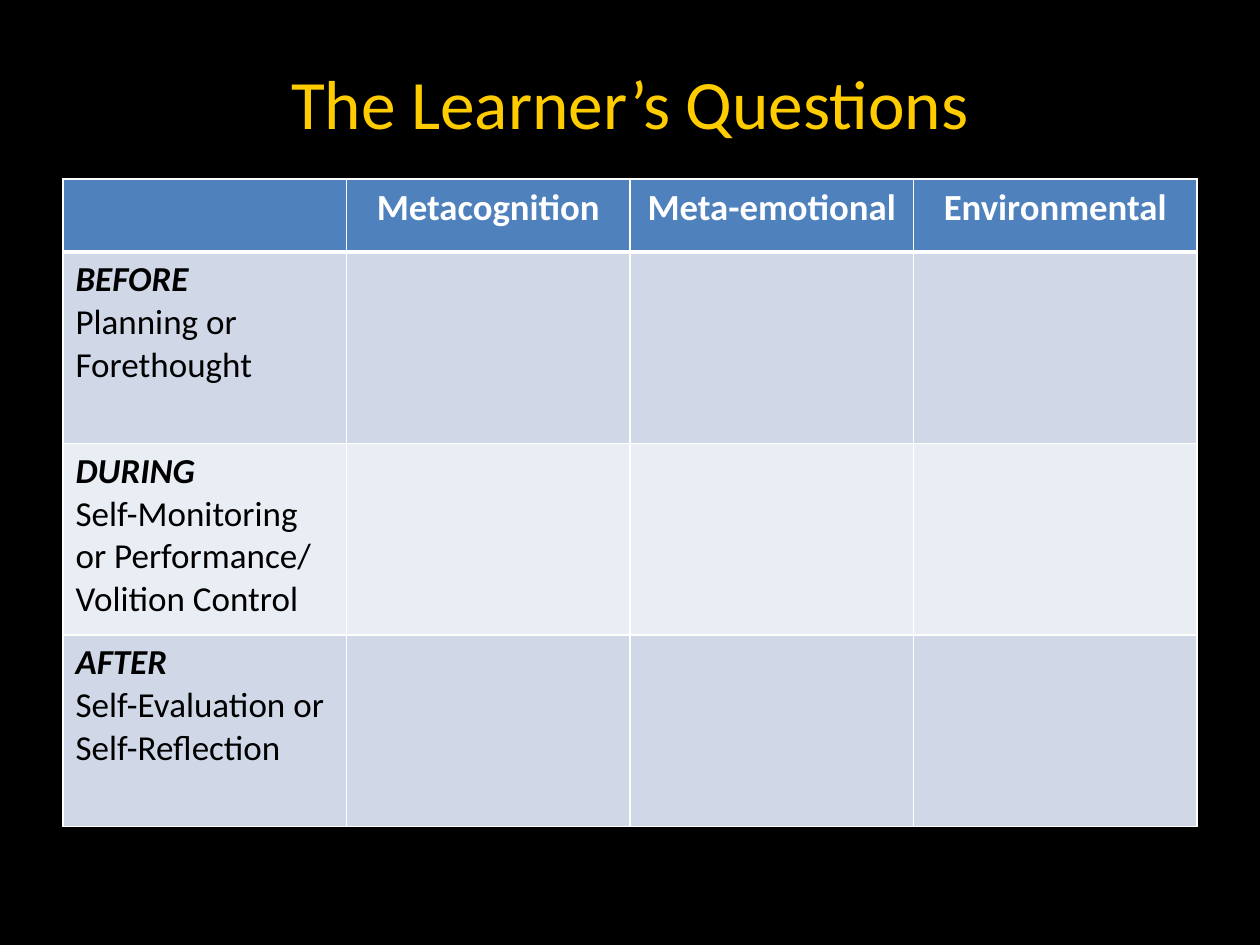
from lxml import etree
from pptx import Presentation
from pptx.dml.color import RGBColor
from pptx.enum import text
from pptx.oxml import ns
from pptx.util import Inches, Pt

COLORS = {
    "background": "000000",
    "title": "FFCC00",
    "header": "4F81BD",
    "odd_row": "D0D8E8",
    "even_row": "E9EDF4",
    "white": "FFFFFF",
    "black": "000000",
}

TITLE = {"size": Pt(39.6), "color": "title"}
HEADING = {"size": Pt(21), "bold": True, "color": "white"}
PHASE = {"size": Pt(20), "bold": True, "italic": True, "color": "black"}
DETAIL = {"size": Pt(20), "bold": False, "italic": False, "color": "black"}

HEADINGS = ["Metacognition", "Meta-emotional", "Environmental"]
PHASES = [
    ["BEFORE", "Planning or Forethought"],
    ["DURING", "Self-Monitoring or Performance/", "Volition Control"],
    ["AFTER", "Self-Evaluation or", "Self-Reflection"],
]
COLUMN_WIDTH = 2.25
HEADER_HEIGHT = 0.58
PHASE_HEIGHT = 1.52


def rgb(name):
    return RGBColor.from_string(COLORS[name])


def write_line(para, line, style):
    span = para.add_run()
    span.text = line
    span.font.name = "Calibri"
    for key, value in style.items():
        if key == "color":
            span.font.color.rgb = rgb(value)
        else:
            setattr(span.font, key, value)


def add_title(page, line):
    box = page.shapes.add_textbox(Inches(0.5), Inches(0.5), Inches(9), Inches(0.62))
    frame = box.text_frame
    frame.word_wrap = True
    frame.vertical_anchor = text.MSO_ANCHOR.MIDDLE
    para = frame.paragraphs[0]
    para.alignment = text.PP_ALIGN.CENTER
    write_line(para, line, TITLE)


def set_borders(cell, widths):
    """Draw white borders; widths maps each side (L, R, T, B) to points."""
    properties = cell._tc.get_or_add_tcPr()
    for index, (side, width) in enumerate(widths.items()):
        border = etree.Element(ns.qn(f"a:ln{side}"), w=str(Pt(width)))
        fill = etree.SubElement(border, ns.qn("a:solidFill"))
        etree.SubElement(fill, ns.qn("a:srgbClr"), val=COLORS["white"])
        properties.insert(index, border)


def format_cell(cell, row):
    fill_name = "header" if row == 0 else "odd_row" if row % 2 else "even_row"
    cell.fill.solid()
    cell.fill.fore_color.rgb = rgb(fill_name)
    # A thick rule separates the header from the phases
    top = 3 if row == 1 else 1
    bottom = 3 if row == 0 else 1
    set_borders(cell, {"L": 1, "R": 1, "T": top, "B": bottom})


def add_question_table(page):
    rows, columns = len(PHASES) + 1, len(HEADINGS) + 1
    height = HEADER_HEIGHT + PHASE_HEIGHT * len(PHASES)
    table = page.shapes.add_table(
        rows, columns, Inches(0.5), Inches(1.42),
        Inches(COLUMN_WIDTH * columns), Inches(height)).table

    # Grid
    for column in table.columns:
        column.width = Inches(COLUMN_WIDTH)
    for row, line in enumerate(table.rows):
        line.height = Inches(PHASE_HEIGHT if row else HEADER_HEIGHT)
        for cell in line.cells:
            format_cell(cell, row)

    # Header row
    for column, heading in enumerate(HEADINGS, 1):
        para = table.cell(0, column).text_frame.paragraphs[0]
        para.alignment = text.PP_ALIGN.CENTER
        write_line(para, heading, HEADING)

    # Phase column
    for row, (phase, *details) in enumerate(PHASES, 1):
        frame = table.cell(row, 0).text_frame
        write_line(frame.paragraphs[0], phase, PHASE)
        for detail in details:
            write_line(frame.add_paragraph(), detail, DETAIL)


def main():
    deck = Presentation()
    deck.slide_width, deck.slide_height = Inches(10), Inches(7.5)
    page = deck.slides.add_slide(deck.slide_layouts[6])
    page.background.fill.solid()
    page.background.fill.fore_color.rgb = rgb("background")

    add_title(page, "The Learner’s Questions")
    add_question_table(page)
    deck.save("out.pptx")


if __name__ == "__main__":
    main()
